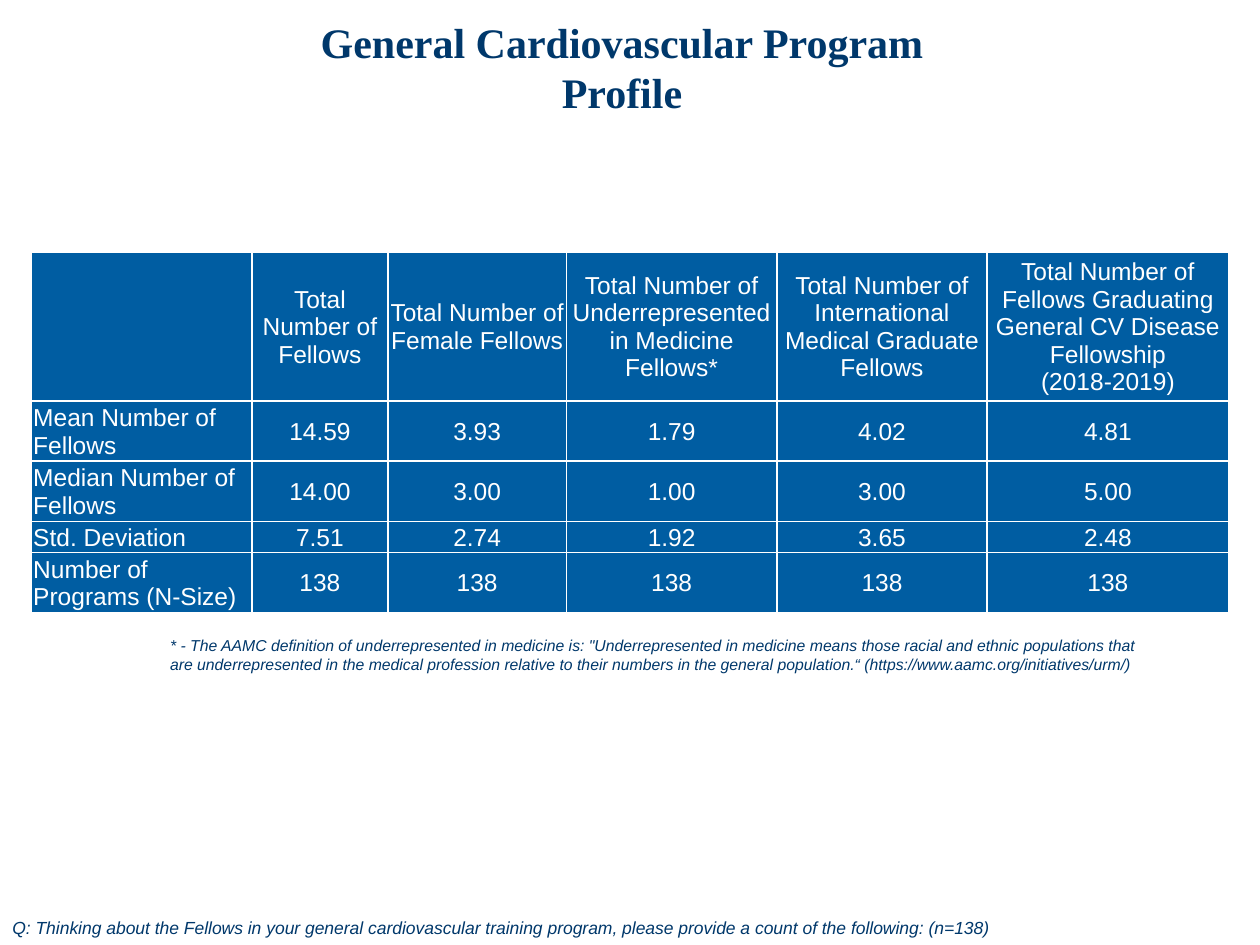
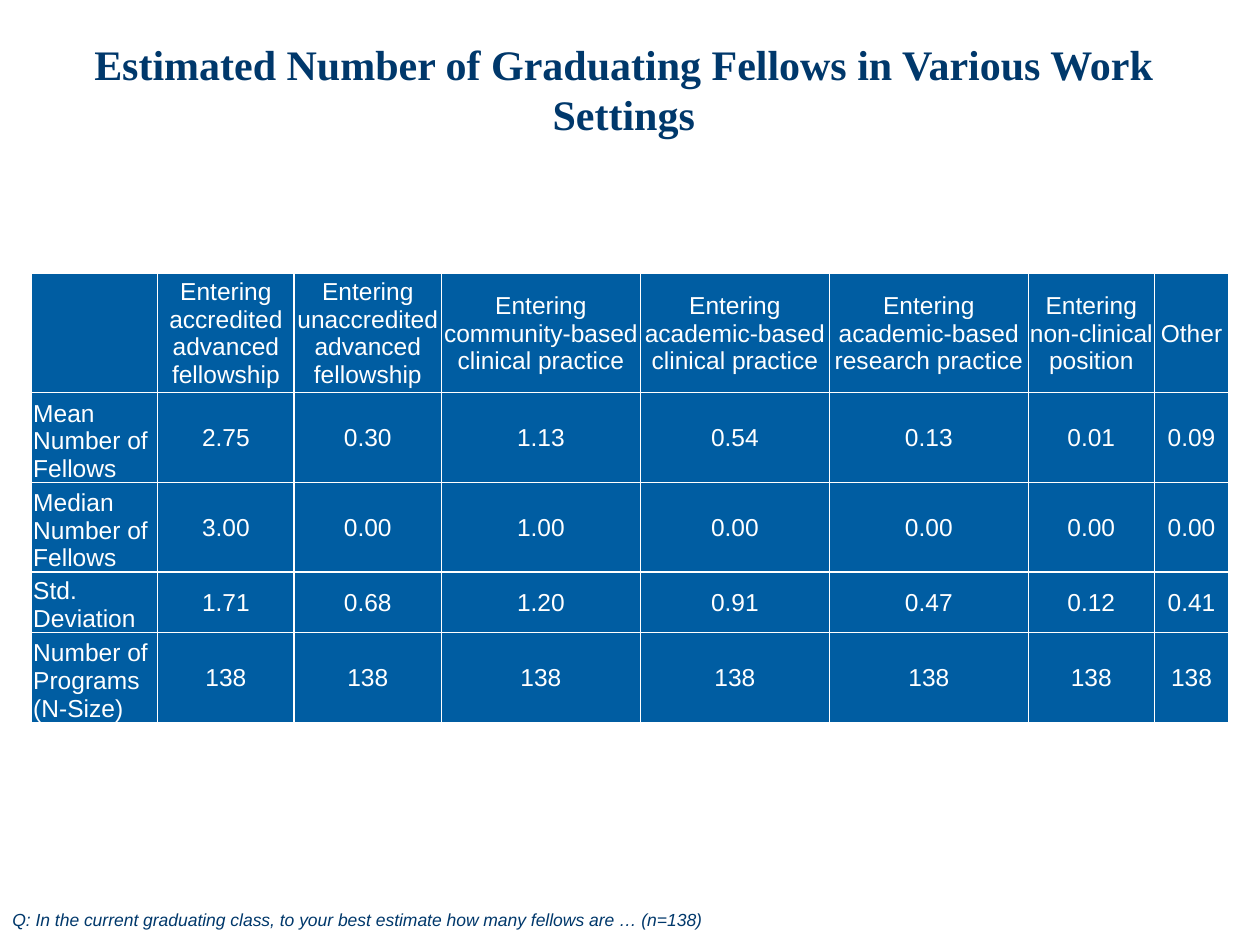
"""Build two slides of survey tables on cardiovascular fellowship programs."""
from lxml.etree import SubElement as Sub
from pptx import Presentation
from pptx.dml.color import RGBColor
from pptx.enum.text import MSO_ANCHOR as Anchor, MSO_AUTO_SIZE as Fit, PP_ALIGN as Align
from pptx.oxml.ns import qn
from pptx.util import Cm, Pt

NAVY = RGBColor(0x00, 0x38, 0x6B)
BLUE = RGBColor(0x00, 0x5D, 0xA2)
WHITE = RGBColor(0xFF, 0xFF, 0xFF)
EDGES = ("a:lnL", "a:lnR", "a:lnT", "a:lnB")


def write(frame, text, size=14, font="Arial", color=NAVY, bold=False,
          italic=False, align=Align.LEFT):
    frame.word_wrap = True
    for n, line in enumerate(text.split("\n")):
        para = frame.add_paragraph() if n else frame.paragraphs[0]
        para.alignment = align
        run = para.add_run()
        run.text = line
        run.font.size = Pt(size)
        run.font.name = font
        run.font.color.rgb = color
        run.font.bold = bold
        run.font.italic = italic


def paint(cell):
    cell.fill.solid()
    cell.fill.fore_color.rgb = BLUE
    props = cell._tc.get_or_add_tcPr()
    for n, edge in enumerate(EDGES):
        line = props.makeelement(qn(edge), {"w": str(Pt(1))})
        fill = Sub(line, qn("a:solidFill"))
        Sub(fill, qn("a:srgbClr"), val=str(WHITE))
        props.insert(n, line)


SLIDES = [
    dict(
        title="General Cardiovascular Program Profile",
        place=(5.1, 0.2, 14.88, 1.27),
        top=5.08,
        cols=(4.44, 2.74, 3.6, 4.24, 4.24, 4.87),
        rows=(3, 1.21, 1.21, 0.62, 1.21),
        anchor=Anchor.MIDDLE,
        cells=[
            ("", "Total Number of Fellows", "Total Number of Female Fellows",
             "Total Number of Underrepresented in Medicine Fellows*",
             "Total Number of International Medical Graduate Fellows",
             "Total Number of Fellows Graduating General CV Disease Fellowship\n(2018-2019)"),
            ("Mean Number of Fellows", "14.59", "3.93", "1.79", "4.02", "4.81"),
            ("Median Number of Fellows", "14.00", "3.00", "1.00", "3.00", "5.00"),
            ("Std. Deviation", "7.51", "2.74", "1.92", "3.65", "2.48"),
            ("Number of Programs (N-Size)",) + ("138",) * 5,
        ],
        notes=[
            ("Q: Thinking about the Fellows in your general cardiovascular training "
             "program, please provide a count of the following: (n=138)",
             10, (0, 18.36, 25.2, 0.69)),
            ("* - The AAMC definition of underrepresented in medicine is: "
             "\"Underrepresented in medicine means those racial and ethnic populations "
             "that are underrepresented in the medical profession relative to their "
             "numbers in the general population.“ (https://www.aamc.org/initiatives/urm/)",
             9, (3.18, 12.7, 20.12, 1.02)),
        ],
    ),
    dict(
        title="Estimated Number of Graduating Fellows in Various Work Settings",
        place=(0.18, 0.64, 24.79, 1.27),
        top=5.51,
        cols=(2.54, 2.75, 2.97, 4.01, 3.81, 4.01, 2.54, 1.5),
        rows=(2.39, 1.8, 1.8, 1.21, 1.8),
        anchor=Anchor.BOTTOM,
        cells=[
            ("", "Entering accredited advanced fellowship",
             "Entering unaccredited advanced fellowship",
             "Entering community-based\nclinical practice",
             "Entering\nacademic-based clinical practice",
             "Entering\nacademic-based research practice",
             "Entering\nnon-clinical position", "Other"),
            ("Mean Number of Fellows", "2.75", "0.30", "1.13", "0.54", "0.13", "0.01", "0.09"),
            ("Median Number of Fellows", "3.00", "0.00", "1.00", "0.00", "0.00", "0.00", "0.00"),
            ("Std. Deviation", "1.71", "0.68", "1.20", "0.91", "0.47", "0.12", "0.41"),
            ("Number of Programs\n(N-Size)",) + ("138",) * 7,
        ],
        notes=[
            ("Q: In the current graduating class, to your best estimate how many "
             "fellows are … (n=138)", 10, (0, 18.21, 25.2, 0.69)),
        ],
    ),
]

deck = Presentation()
deck.slide_width, deck.slide_height = Cm(25.4), Cm(19.05)

for data in SLIDES:
    slide = deck.slides.add_slide(deck.slide_layouts[5])
    title = slide.shapes.title
    title.left, title.top, title.width, title.height = map(Cm, data["place"])
    write(title.text_frame, data["title"], size=24, font="Times New Roman",
          bold=True, align=Align.CENTER)
    title.text_frame.auto_size = Fit.SHAPE_TO_FIT_TEXT
    title.text_frame.vertical_anchor = Anchor.TOP

    cols, rows = data["cols"], data["rows"]
    table = slide.shapes.add_table(len(rows), len(cols), Cm(0.64), Cm(data["top"]),
                                   Cm(sum(cols)), Cm(sum(rows))).table
    table.first_row = table.horz_banding = False
    for col, width in zip(table.columns, cols):
        col.width = Cm(width)
    for row, height, texts in zip(table.rows, rows, data["cells"]):
        row.height = Cm(height)
        for n, (cell, text) in enumerate(zip(row.cells, texts)):
            paint(cell)
            cell.margin_left = cell.margin_right = cell.margin_top = Cm(0.03)
            cell.margin_bottom = 0
            cell.vertical_anchor = Anchor.MIDDLE if n else data["anchor"]
            if text:
                write(cell.text_frame, text, color=WHITE,
                      align=Align.CENTER if n else Align.LEFT)

    for text, size, place in data["notes"]:
        note = slide.shapes.add_textbox(*map(Cm, place))
        write(note.text_frame, text, size=size, italic=True)
        note.text_frame.auto_size = Fit.SHAPE_TO_FIT_TEXT

deck.save("out.pptx")
